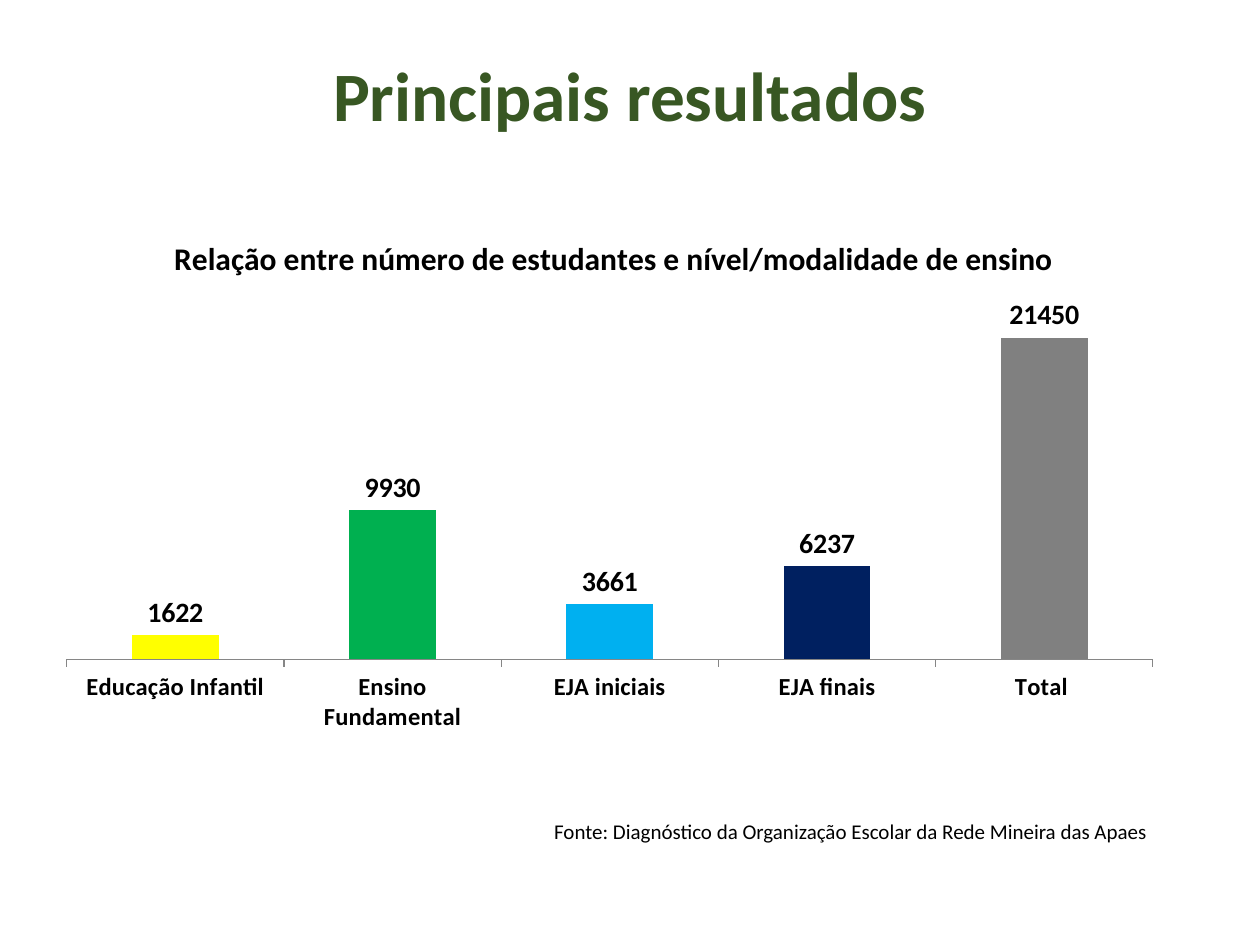
from typing import NamedTuple

from lxml import etree
from pptx import Presentation, util as u
from pptx.chart.data import CategoryChartData
from pptx.dml.color import RGBColor
from pptx.enum import chart as ch, text
from pptx.oxml.ns import qn

FONT = "Calibri"
WIDTH, HEIGHT = u.Inches(10), u.Inches(7.5)


class Box(NamedTuple):
    """Place and size as shares of the slide or chart."""
    x: float
    y: float
    w: float
    h: float

    def on_slide(self) -> tuple[int, int, int, int]:
        return (int(self.x * WIDTH), int(self.y * HEIGHT),
                int(self.w * WIDTH), int(self.h * HEIGHT))


class Level(NamedTuple):
    name: str
    students: int
    color: str


LEVELS = [
    Level("Educação Infantil", 1622, "FFFF00"),
    Level("Ensino Fundamental", 9930, "00B050"),
    Level("EJA iniciais", 3661, "00B0F0"),
    Level("EJA finais", 6237, "002060"),
    Level("Total ", 21450, "808080"),
]


def rgb(color: str) -> RGBColor:
    return RGBColor.from_string(color)


def style(font, size: float, color: str = "000000", bold: bool = False) -> None:
    font.name, font.size, font.bold = FONT, u.Pt(size), bold
    font.color.rgb = rgb(color)


def add_run(p, words: str, size: float, color: str = "000000", bold: bool = False) -> None:
    r = p.add_run()
    r.text = words
    style(r.font, size, color, bold)


def set_layout(parent, before: str, **values: str | float) -> None:
    """Fix the manual layout of a chart part, ahead of the element named."""
    for old in parent.findall(qn("c:layout")):
        parent.remove(old)
    layout = etree.Element(qn("c:layout"))
    manual = etree.SubElement(layout, qn("c:manualLayout"))
    for name, value in values.items():
        etree.SubElement(manual, qn(f"c:{name}")).set("val", str(value))
    parent.find(qn(before)).addprevious(layout)


def add_title(slide, box: Box) -> None:
    sp = slide.shapes.title
    sp.left, sp.top, sp.width, sp.height = box.on_slide()
    tf = sp.text_frame
    tf.vertical_anchor = text.MSO_ANCHOR.MIDDLE
    p = tf.paragraphs[0]
    p.alignment, p.line_spacing = text.PP_ALIGN.CENTER, 0.9
    add_run(p, "Principais resultados", 39.6, "385723", True)


def add_source_note(slide, box: Box) -> None:
    tf = slide.shapes.add_textbox(*box.on_slide()).text_frame
    tf.word_wrap = True
    tf.auto_size = text.MSO_AUTO_SIZE.SHAPE_TO_FIT_TEXT
    p = tf.paragraphs[0]
    p.alignment = text.PP_ALIGN.JUSTIFY
    add_run(p, "Fonte: Diagnóstico da Organização Escolar da Rede Mineira das Apaes", 12)


def add_student_chart(slide, box: Box, plot_box: Box) -> None:
    data = CategoryChartData()
    data.categories = [level.name for level in LEVELS]
    data.add_series("Series 1", [level.students for level in LEVELS])
    chart = slide.shapes.add_chart(
        ch.XL_CHART_TYPE.COLUMN_CLUSTERED, *box.on_slide(), data).chart
    style(chart.font, 10)
    chart.has_legend = False

    chart.has_title = True
    title = chart.chart_title
    add_run(title.text_frame.paragraphs[0],
            "Relação entre número de estudantes e nível/modalidade de ensino", 18, bold=True)
    title.include_in_layout = False
    set_layout(title._element, "c:overlay", xMode="edge", yMode="edge", x=0.11, y=0.05)

    axis = chart.category_axis
    axis.major_tick_mark = ch.XL_TICK_MARK.OUTSIDE
    axis.format.line.color.rgb = rgb("868686")
    axis.format.line.width = u.Pt(0.75)
    style(axis.tick_labels.font, 14, bold=True)
    values = chart.value_axis
    values.visible = values.has_major_gridlines = False
    values.minimum_scale, values.maximum_scale = 0, 25000

    plot = chart.plots[0]
    plot.gap_width, plot.vary_by_categories = 150, False
    series = plot.series[0]
    series.format.fill.solid()
    series.format.fill.fore_color.rgb = rgb("5B9BD5")
    for i, level in enumerate(LEVELS):
        fill = series.points[i].format.fill
        fill.solid()
        fill.fore_color.rgb = rgb(level.color)
    labels = series.data_labels
    labels.show_value = True
    labels.position = ch.XL_LABEL_POSITION.OUTSIDE_END
    style(labels.font, 16, bold=True)

    area = plot._element.getparent()
    set_layout(area, "c:barChart", layoutTarget="inner", xMode="edge", yMode="edge",
               **plot_box._asdict())


def main() -> None:
    prs = Presentation()
    prs.slide_width, prs.slide_height = WIDTH, HEIGHT
    slide = prs.slides.add_slide(prs.slide_layouts[5])
    add_title(slide, Box(0.07, 0.05, 0.86, 0.11))
    add_source_note(slide, Box(0.43, 0.86, 0.54, 0.04))
    add_student_chart(slide, Box(0.035, 0.216, 0.898, 0.567), Box(0.02, 0.15, 0.96, 0.7))
    prs.save("out.pptx")


if __name__ == "__main__":
    main()
